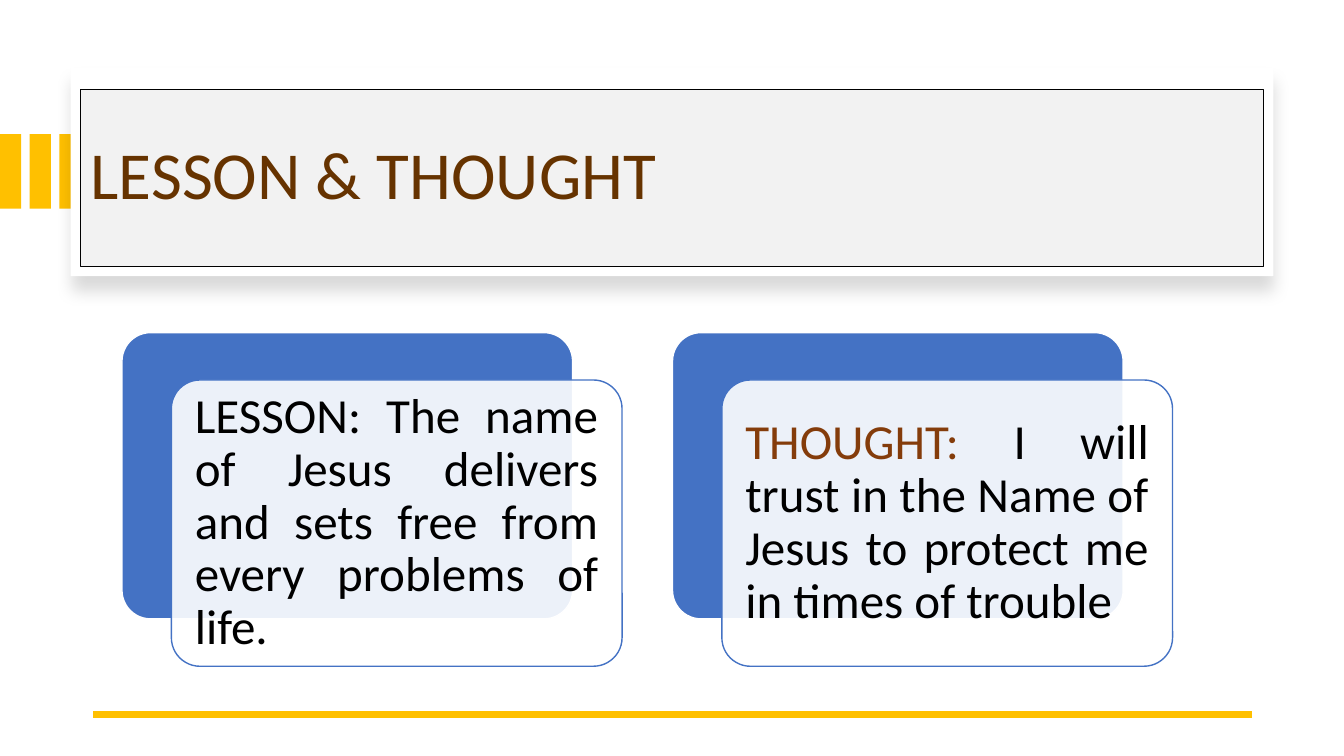
from lxml.etree import SubElement
from pptx import Presentation
from pptx.dml.color import RGBColor
from pptx.enum.shapes import MSO_CONNECTOR, MSO_SHAPE
from pptx.enum.text import MSO_ANCHOR, MSO_AUTO_SIZE, PP_ALIGN
from pptx.oxml.ns import qn
from pptx.util import Inches, Pt

COLORS = {
    "accent": "FFC000", "white": "FFFFFF", "black": "000000", "title_fill": "F2F2F2",
    "title_text": "663300", "card": "4472C4", "highlight": "843C0B",
}
CARDS = [
    [("LESSON: The name of Jesus delivers and sets free from every problems of life.", "black")],
    [("THOUGHT: ", "highlight"),
     ("I will trust in the Name of Jesus to protect me in times of trouble", "black")],
]


def rgb(name):
    return RGBColor.from_string(COLORS[name])


def paint(shape, fill, line=None, width=1):
    shape.fill.solid()
    shape.fill.fore_color.rgb = rgb(fill)
    if line:
        shape.line.color.rgb = rgb(line)
        shape.line.width = Pt(width)
    else:
        shape.line.fill.background()


def add_box(slide, box, kind=MSO_SHAPE.RECTANGLE, **style):
    shape = slide.shapes.add_shape(kind, *map(Inches, box))
    shape.shadow.inherit = False
    paint(shape, **style)
    return shape


def write(shape, runs, size, **frame_format):
    """Fill a shape with one justified paragraph of coloured runs."""
    frame = shape.text_frame
    frame_format = {"word_wrap": True, "auto_size": MSO_AUTO_SIZE.NONE,
                    "vertical_anchor": MSO_ANCHOR.MIDDLE, **frame_format}
    for name, value in frame_format.items():
        setattr(frame, name, value)
    paragraph = frame.paragraphs[0]
    paragraph.alignment = PP_ALIGN.JUSTIFY
    paragraph.line_spacing = 0.9
    for text, color in runs:
        run = paragraph.add_run()
        run.text = text
        for name, value in {"name": "Calibri", "size": Pt(size)}.items():
            setattr(run.font, name, value)
        run.font.color.rgb = rgb(color)


def add_shadow(shape):
    effects = shape._element.spPr.find(qn("a:effectLst"))
    shadow = SubElement(effects, qn("a:outerShdw"), blurRad=str(Pt(11)),
                        dist=str(Pt(10)), dir="5400000", algn="t", rotWithShape="0")
    color = SubElement(shadow, qn("a:srgbClr"), val=COLORS["black"])
    SubElement(color, qn("a:alpha"), val="15000")


def add_stripes(slide, left, top, width, height, count=3):
    pitch = (width * 1.4)
    for index in range(count):
        add_box(slide, (left + index * pitch, top, width, height), fill="accent")


def add_header(slide, left, top, width, height):
    panel = add_box(slide, (left, top, width, height), fill="white")
    add_shadow(panel)
    title = slide.shapes.title
    margin = 0.1
    place = {"left": left + margin, "top": top + 0.22,
             "width": width - 2 * margin, "height": height - 0.22 - margin}
    for name, value in place.items():
        setattr(title, name, Inches(value))
    paint(title, "title_fill", "black", 0.75)
    write(title, [("LESSON & THOUGHT", "title_text")], 48)
    panel._element.addnext(title._element)


def add_rule(slide, left, top, width):
    rule = slide.shapes.add_connector(MSO_CONNECTOR.STRAIGHT, Inches(left + width), Inches(top),
                                      Inches(left), Inches(top))
    rule.line.color.rgb = rgb("accent")
    rule.line.width = Pt(4.5)
    SubElement(rule._element.spPr, qn("a:effectLst"))


def add_card(slide, left, top, width, height, runs):
    """Draw a solid card with a translucent text card offset over it."""
    rounded = MSO_SHAPE.ROUNDED_RECTANGLE
    back = add_box(slide, (left, top, width, height), rounded, fill="card", line="white")
    front = add_box(slide, (left + 0.49, top + 0.47, width, height), rounded,
                    fill="white", line="card")
    for shape in (back, front):
        shape.adjustments[0] = 0.1
    color = front._element.spPr.find(qn("a:solidFill"))[0]
    SubElement(color, qn("a:alpha"), val="90000")
    sides = ("left", "top", "right", "bottom")
    write(front, runs, 35, **{f"margin_{side}": Inches(0.15) for side in sides})


def main():
    presentation = Presentation()
    presentation.slide_width = Inches(13.33)
    presentation.slide_height = Inches(7.5)
    slide = presentation.slides.add_slide(presentation.slide_layouts[5])
    add_stripes(slide, 0, 1.33, 0.21, 0.74)
    add_header(slide, 0.7, 0.67, 11.93, 2.07)
    add_rule(slide, 0.92, 7.09, 11.5)
    for column, runs in enumerate(CARDS):
        add_card(slide, 1.21 + column * 5.46, 3.3, 4.47, 2.84, runs)
    presentation.save("out.pptx")


if __name__ == "__main__":
    main()
